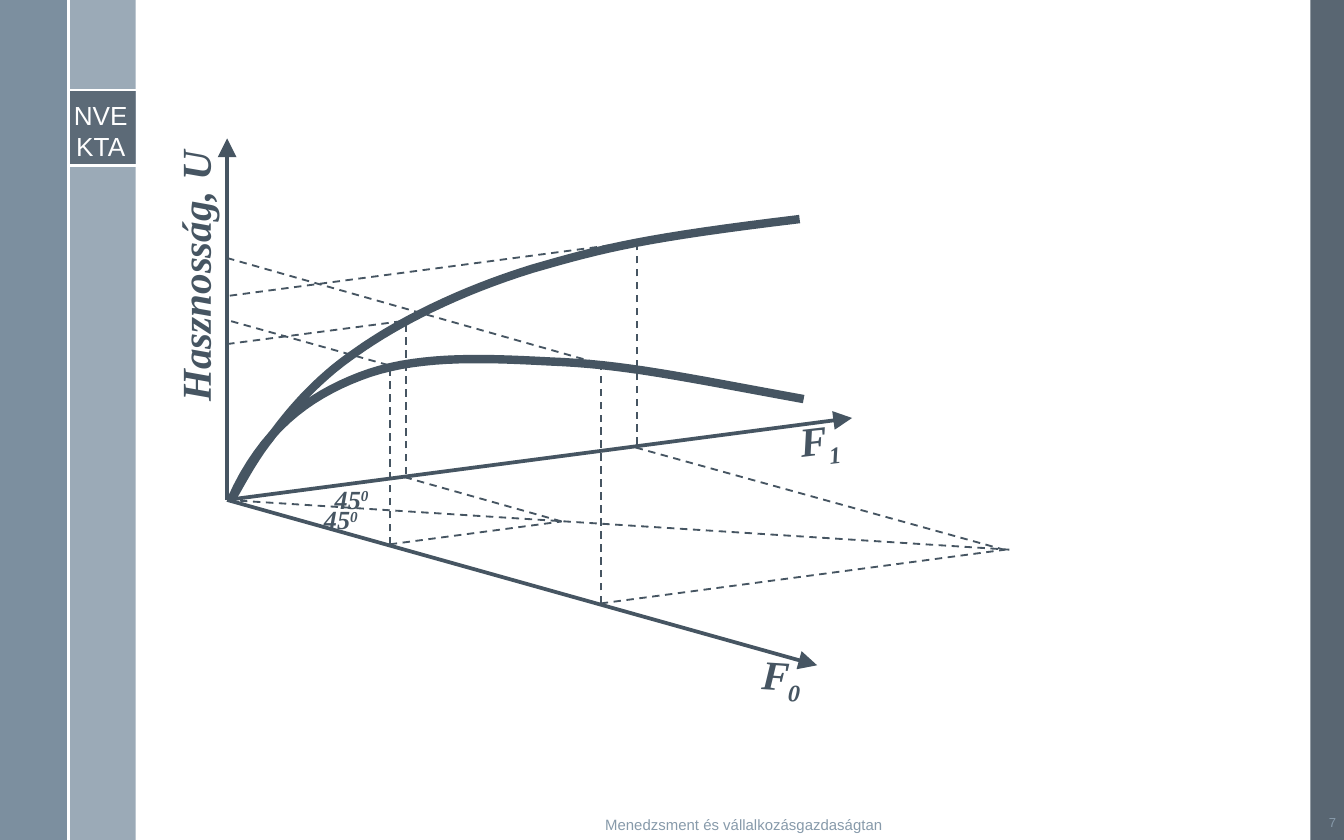
"""Build the slide on utility curves over two time axes."""
from lxml import etree
from pptx import Presentation
from pptx.dml.color import RGBColor
from pptx.enum.dml import MSO_LINE
from pptx.enum.shapes import MSO_CONNECTOR, MSO_SHAPE
from pptx.enum.text import MSO_ANCHOR, PP_ALIGN
from pptx.oxml.ns import qn
from pptx.util import Inches, Pt

RECT, LINE, DASH = MSO_SHAPE.RECTANGLE, MSO_CONNECTOR.STRAIGHT, MSO_LINE.DASH
TOP, MIDDLE = MSO_ANCHOR.TOP, MSO_ANCHOR.MIDDLE
CENTER, RIGHT = PP_ALIGN.CENTER, PP_ALIGN.RIGHT
WHITE = RGBColor(0xFF, 0xFF, 0xFF)
INK = RGBColor(0x46, 0x55, 0x62)
EDGE = RGBColor(0x59, 0x66, 0x72)
BAND = RGBColor(0x9B, 0xAA, 0xB7)
SIDE = RGBColor(0x7C, 0x8F, 0x9F)
BADGE = RGBColor(0x5C, 0x6A, 0x77)
MUTED = RGBColor(0x87, 0x9A, 0xAA)

deck = Presentation()
deck.slide_width, deck.slide_height = Inches(10), Inches(6.25)
slide = deck.slides.add_slide(deck.slide_layouts[6])
shapes = slide.shapes


def add_line(ends, color, width, dash=None, arrow=False):
    line = shapes.add_connector(LINE, *map(Inches, ends))
    form = {"width": Pt(width), "dash_style": dash}
    for key, value in form.items():
        setattr(line.line, key, value)
    line.line.color.rgb = color
    props = line._element.spPr
    if arrow:
        etree.SubElement(props.find(qn("a:ln")), qn("a:tailEnd"),
                         type="triangle", w="lg", len="lg")
    etree.SubElement(props, qn("a:effectLst"))


def add_text(box, rows, font, align=RIGHT, anchor=TOP, pad=(0.1, 0.05), turn=0):
    label = shapes.add_textbox(*map(Inches, box))
    label.rotation = turn
    frame = label.text_frame
    side, edge = map(Inches, pad)
    form = {"word_wrap": True, "vertical_anchor": anchor,
            "margin_left": side, "margin_right": side,
            "margin_top": edge, "margin_bottom": edge}
    for key, value in form.items():
        setattr(frame, key, value)
    color, style = font
    for index, row in enumerate(rows):
        para = frame.add_paragraph() if index else frame.paragraphs[0]
        para.alignment = align
        for text, shift in row:
            run = para.add_run()
            run.text = text
            for key, value in style.items():
                setattr(run.font, key, value)
            run.font.color.rgb = color
            if shift:
                run.font._element.set("baseline", str(shift * 1000))


for box, color in (
    ((9.75, 0, 0.25, 6.25), EDGE),
    ((0.51, 0, 0.5, 6.25), BAND),
    ((0, 0, 0.5, 6.25), SIDE),
    ((0.51, 0.67, 0.5, 0.56), BADGE),
):
    panel = shapes.add_shape(RECT, *map(Inches, box))
    panel.shadow.inherit = False
    panel.fill.solid()
    panel.fill.fore_color.rgb = color
    panel.line.fill.background()

for ends in ((0.51, 0.67, 1.01, 0.67), (0.51, 1.23, 1.01, 1.23), (0.51, 0, 0.51, 6.25)):
    add_line(ends, WHITE, 1.5)
add_text((0.5, 0.74, 0.5, 0.47), [[("NVE", 0)], [("KTA", 0)]],
         (WHITE, {"name": "Arial", "size": Pt(14)}), CENTER, pad=(0, 0))

for tip in ((6.34, 3.11), (1.69, 1.03), (6.08, 4.95)):
    add_line((1.69, 3.72, *tip), INK, 2, arrow=True)

CURVES = (
    ((5.95, 1.63), (4.8, 1.77), (4.51, 1.84), (3.96, 2), (3.41, 2.17), (2.96, 2.4),
     (2.65, 2.62), (2.34, 2.83), (2.13, 3.09), (2.01, 3.26), (1.88, 3.42),
     (1.77, 3.64), (1.72, 3.72)),
    ((5.98, 2.97), (5.05, 2.8), (4.64, 2.71), (4.09, 2.69), (3.54, 2.66), (3.07, 2.65),
     (2.68, 2.8), (2.29, 2.95), (1.95, 3.2), (1.72, 3.72)),
)
STEPS = 16
for knots in CURVES:
    dots = []
    for first in range(0, len(knots) - 1, 3):
        for step in range(1, STEPS + 1):
            t = step / STEPS
            parts = ((1 - t) ** 3, 3 * t * (1 - t) ** 2, 3 * t * t * (1 - t), t ** 3)
            dots.append([Inches(sum(p * k[axis] for p, k in zip(parts, knots[first:first + 4])))
                         for axis in (0, 1)])
    trace = shapes.build_freeform(*map(Inches, knots[0]))
    trace.add_line_segments(dots, close=False)
    curve = trace.convert_to_shape()
    curve.shadow.inherit = False
    curve.fill.background()
    curve.line.color.rgb = INK
    curve.line.width = Pt(4.5)

for ends in (
    (1.72, 2.39, 2.9, 2.72), (1.69, 2.56, 2.99, 2.39),
    (2.9, 4.05, 2.9, 2.74), (3.02, 3.53, 3.02, 2.38),
    (1.69, 3.72, 7.51, 4.09),
    (4.47, 4.49, 4.47, 2.72), (4.74, 3.31, 4.74, 1.82),
    (1.69, 1.92, 4.44, 2.7), (1.71, 2.2, 4.73, 1.8),
    (4.73, 3.33, 7.47, 4.09), (2.9, 4.05, 4.18, 3.88),
    (4.47, 4.49, 7.48, 4.09), (3.01, 3.55, 4.18, 3.88),
):
    add_line(ends, INK, 1, DASH)

SERIF = {"name": "Times New Roman", "bold": True, "italic": True}
for box, row, size, turn in (
    ((-0.41, 2.65, 3.72, 0.47), [("Hasznosság, U", 0)], 22, 270),
    ((5.51, 4.78, 0.55, 0.47), [("F", 0), ("0", -25)], 22, 3.6),
    ((5.79, 3.04, 0.55, 0.47), [("F", 0), ("1", -25)], 22, 353.1),
    ((2.24, 3.7, 0.52, 0.34), [("45", 0), ("0", 30)], 14, 0),
    ((2.32, 3.55, 0.52, 0.34), [("45", 0), ("0", 30)], 14, 0),
):
    add_text(box, [row], (INK, {**SERIF, "size": Pt(size)}), turn=turn)

for box, text, size, align in (
    ((2.39, 6.06, 6.29, 0.15), "Menedzsment és vállalkozásgazdaságtan", 8, CENTER),
    ((9.73, 6.02, 0.29, 0.2), "7", 7, RIGHT),
):
    add_text(box, [[(text, 0)]], (MUTED, {"name": "Arial", "size": Pt(size)}),
             align, MIDDLE, (0.08, 0.04))

deck.save("out.pptx")
